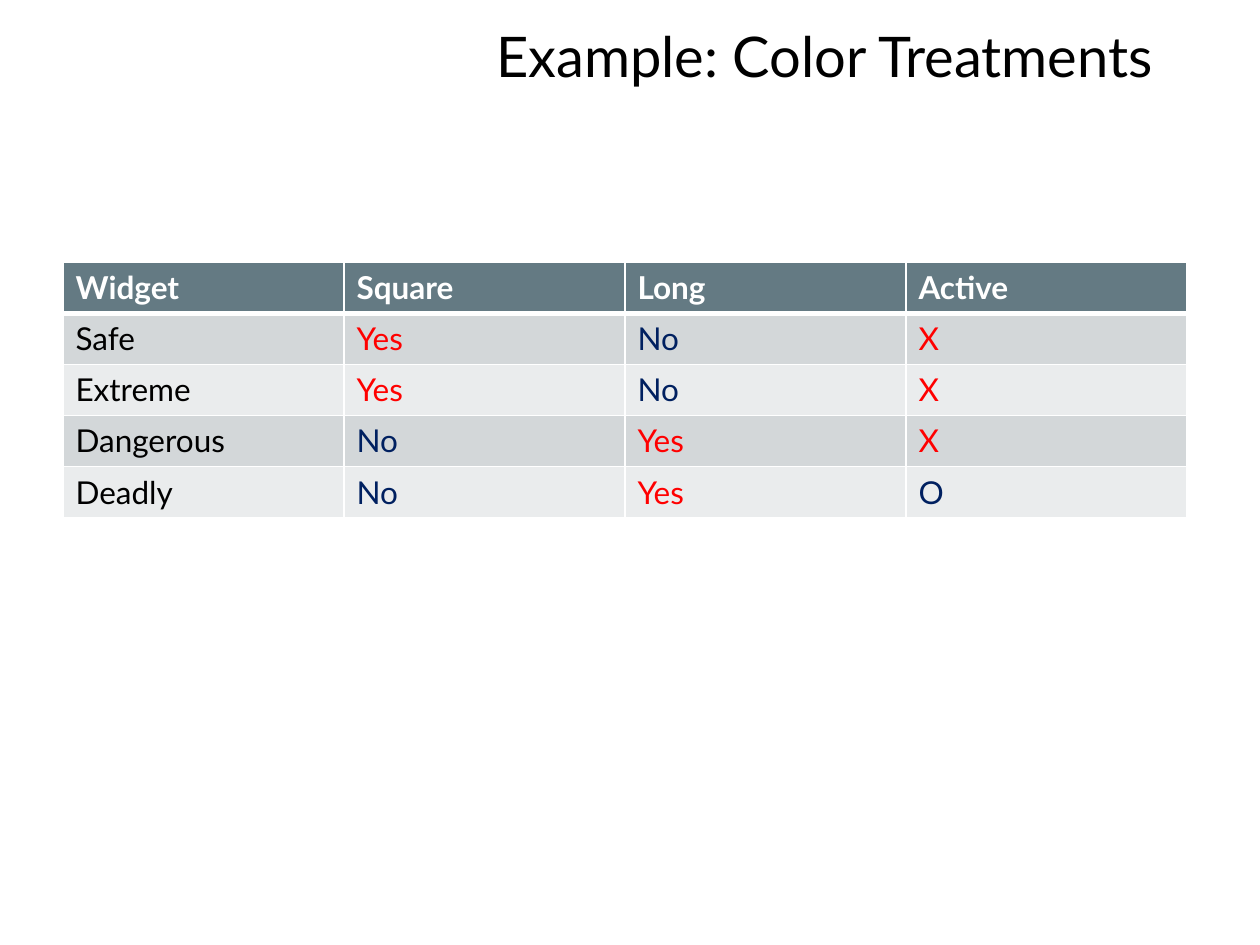
from lxml.etree import SubElement as Sub
from pptx import Presentation
from pptx.dml.color import RGBColor
from pptx.enum.text import MSO_ANCHOR as Anchor, PP_ALIGN as Align
from pptx.oxml.ns import qn
from pptx.util import Inches, Pt

ROWS = [
    ["Widget", "Square", "Long", "Active"],
    ["Safe", "Yes", "No", "X"],
    ["Extreme", "Yes", "No", "X"],
    ["Dangerous", "No", "Yes", "X"],
    ["Deadly", "No", "Yes", "O"],
]
BLACK, WHITE, RED, NAVY = "000000", "FFFFFF", "FF0000", "002060"
HEAD, BANDS = "647A83", ["EAECED", "D3D7D9"]
MARKS = {"Yes": RED, "X": RED, "No": NAVY, "O": NAVY}


def color(code):
    return RGBColor.from_string(code)


def write(frame, text, font="Lato", size=18, ink=BLACK, bold=False, align=Align.LEFT):
    para = frame.paragraphs[0]
    para.alignment = align
    run = para.add_run()
    run.text = text
    run.font.name, run.font.size, run.font.bold = font, Pt(size), bold
    run.font.color.rgb = color(ink)


def edge(cell, side, width, ink=WHITE):
    line = Sub(cell._tc.get_or_add_tcPr(), qn(f"a:ln{side}"), w=str(Pt(width)))
    Sub(Sub(line, qn("a:solidFill")), qn("a:srgbClr"), val=ink)


class Deck:
    """Holds the style and the current slide."""

    def __init__(self, font="Lato"):
        self.font = font
        self.file = Presentation()
        self.file.slide_width, self.file.slide_height = Inches(10), Inches(7.5)
        self.slide = self.file.slides.add_slide(self.file.slide_layouts[6])

    def title(self, text, *box):
        frame = self.slide.shapes.add_textbox(*map(Inches, box)).text_frame
        frame.word_wrap = True
        frame.vertical_anchor = Anchor.BOTTOM
        write(frame, text, self.font, size=32, align=Align.RIGHT)

    def table(self, rows, *box):
        shape = self.slide.shapes.add_table(len(rows), len(rows[0]), *map(Inches, box))
        for r, row in enumerate(rows):
            for c, text in enumerate(row):
                self.cell(shape.table.cell(r, c), text, r)

    def cell(self, cell, text, r):
        head = r == 0
        ink = WHITE if head else MARKS.get(text, BLACK)
        write(cell.text_frame, text, self.font, ink=ink, bold=head)
        for side, width in zip("LRTB", (1, 1, 3 if r == 1 else 1, 3 if head else 1)):
            edge(cell, side, width)
        cell.fill.solid()
        cell.fill.fore_color.rgb = color(HEAD if head else BANDS[r % 2])


def main():
    deck = Deck()
    deck.title("Example: Color Treatments", 0.33, 0.33, 8.92, 0.42)
    deck.table(ROWS, 0.5, 2.08, 8.92, 2.03)
    deck.file.save("out.pptx")


if __name__ == "__main__":
    main()
